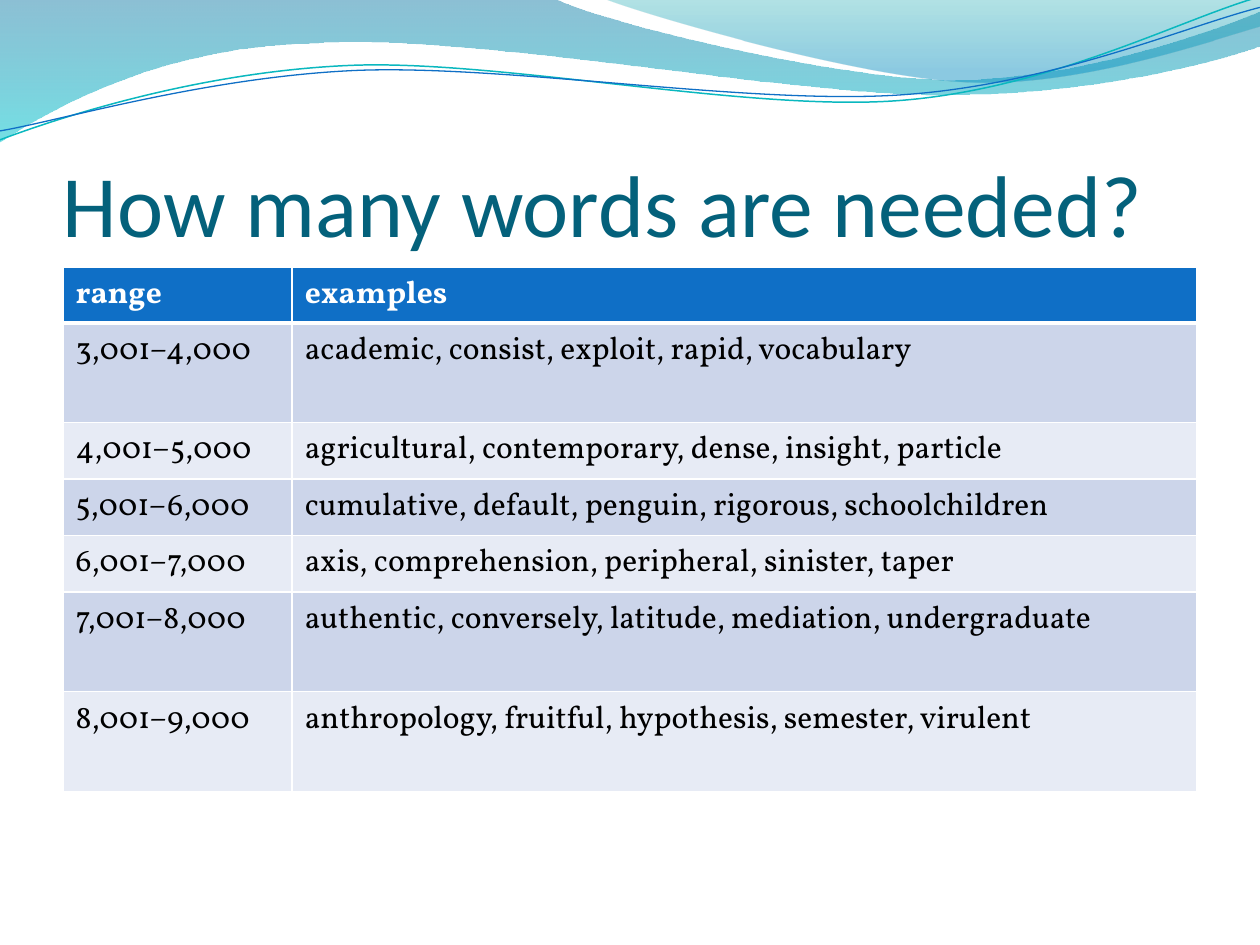
from lxml.etree import SubElement
from pptx import Presentation
from pptx.dml.color import RGBColor
from pptx.enum.text import MSO_ANCHOR
from pptx.oxml.ns import qn
from pptx.util import Cm, Pt

WHITE = RGBColor(0xFF, 0xFF, 0xFF)
BLACK = RGBColor(0, 0, 0)
BLUE = RGBColor(0x0F, 0x6F, 0xC6)
TEAL = RGBColor(0x0A, 0xB8, 0xBF)
TITLE_TEAL = RGBColor(0x04, 0x61, 0x7B)
BAND_DARK = RGBColor(0xCC, 0xD5, 0xEA)
BAND_LIGHT = RGBColor(0xE7, 0xEB, 0xF5)

# Content: each row is range, examples, height in cm
TITLE = "How many words are needed?"
WORD_ROWS = [
    ("range", "examples", 1.13),
    ("3,001–4,000", "academic, consist, exploit, rapid, vocabulary", 2.01),
    ("4,001–5,000", "agricultural, contemporary, dense, insight, particle", 1.14),
    ("5,001–6,000", "cumulative, default, penguin, rigorous, schoolchildren", 1.14),
    ("6,001–7,000", "axis, comprehension, peripheral, sinister, taper", 1.14),
    ("7,001–8,000", "authentic, conversely, latitude, mediation, undergraduate", 2.01),
    ("8,001–9,000", "anthropology, fruitful, hypothesis, semester, virulent", 2.01),
]
COLUMN_WIDTHS = (4.62, 18.24)

# Outlines in cm: a start point, then segments of one point (line) or three (curve)
# Gradient stops are position, colour, opacity in percent
WAVES = [
    {"start": (0, 0),
     "segments": [[(11.18, -0.03)],
                  [(12.09, 0.43), (16.87, 1.6), (19.25, 1.6)],
                  [(21.67, 1.6), (24.33, 0.66), (25.4, 0.23)],
                  [(25.43, 0.91)],
                  [(24.97, 1.12), (22.1, 1.93), (18.95, 1.91)],
                  [(15.8, 1.91), (9.7, 0.71), (6.53, 0.86)],
                  [(3.28, 0.91), (1.17, 2.11), (-0.03, 2.87)]],
     "stops": [(0, RGBColor(0, 0x74, 0xA1), 45), (1, RGBColor(0, 0xC6, 0xCF), 55)]},
    {"start": (12.17, -0.03),
     "segments": [[(12.93, 0.28), (17.32, 1.57), (19.53, 1.65)],
                  [(21.74, 1.75), (24.41, 0.81), (25.4, 0.53)],
                  [(25.4, 0)]],
     "stops": [(0, RGBColor(0, 0xA1, 0xA9), 30), (0.8, RGBColor(0, 0x8B, 0xBF), 45)]},
]
RIPPLES = [
    {"start": (0, 2.82), "color": TEAL, "width": 0.85,
     "segments": [[(1.22, 2.36), (4.01, 1.45), (7.04, 1.32)],
                  [(10.03, 1.19), (15.06, 2.26), (18.11, 2.03)],
                  [(21.16, 1.8), (23.83, 0.38), (25.35, -0.05)]]},
    {"start": (0, 2.64), "color": BLUE, "width": 0.75,
     "segments": [[(1.19, 2.44), (4.17, 1.55), (7.19, 1.42)],
                  [(10.24, 1.3), (15.16, 2.13), (18.21, 1.91)],
                  [(21.23, 1.7), (23.9, 0.53), (25.4, 0.15)]]},
]


def set_format(target, values):
    for name, value in values.items():
        setattr(target, name, value)


def set_font(paragraph, color, **values):
    font = paragraph.runs[0].font
    set_format(font, values)
    font.color.rgb = color


def add_outline(shapes, start, segments, close):
    """Draw a freeform through all points, then bend the three-point segments."""
    points = [(Cm(x), Cm(y)) for segment in segments for x, y in segment]
    builder = shapes.build_freeform(Cm(start[0]), Cm(start[1]))
    builder.add_line_segments(points, close=close)
    outline = builder.convert_to_shape()
    outline.shadow.inherit = False
    steps = iter(list(outline._element.iter(qn("a:lnTo"))))
    for segment in segments:
        group = [next(steps) for _ in segment]
        if len(group) == 3:
            group[0].tag, curve = qn("a:lnTo"), group[0].makeelement(qn("a:cubicBezTo"))
            group[0].addprevious(curve)
            for step in group:
                curve.append(step[0])
                step.getparent().remove(step)
    return outline


def add_wave(shapes, wave):
    shape = add_outline(shapes, wave["start"], wave["segments"], True)
    shape.line.fill.background()
    shape.fill.gradient()
    shape.fill.gradient_angle = 270
    for stop, (position, color, _) in zip(shape.fill.gradient_stops, wave["stops"]):
        stop.position = position
        stop.color.rgb = color
    colors = shape._element.spPr.iter(qn("a:srgbClr"))
    for color, (_, _, opacity) in zip(list(colors), wave["stops"]):
        SubElement(color, qn("a:alpha"), val=str(opacity * 1000))


def add_ripple(shapes, ripple):
    shape = add_outline(shapes, ripple["start"], ripple["segments"], False)
    shape.fill.background()
    shape.line.color.rgb = ripple["color"]
    shape.line.width = Pt(ripple["width"])


def set_borders(cell, widths):
    properties = cell._tc.get_or_add_tcPr()
    for index, (side, width) in enumerate(widths.items()):
        border = properties.makeelement(qn("a:ln" + side), {"w": str(Pt(width))})
        fill = SubElement(border, qn("a:solidFill"))
        SubElement(fill, qn("a:srgbClr"), val=str(WHITE))
        properties.insert(index, border)


def add_title(shapes):
    title = shapes.add_textbox(Cm(1.27), Cm(1.96), Cm(22.86), Cm(3.18))
    frame = title.text_frame
    set_format(frame, {"word_wrap": True, "vertical_anchor": MSO_ANCHOR.BOTTOM,
                       "margin_left": 0, "margin_right": 0,
                       "margin_top": Cm(0.13), "margin_bottom": 0})
    frame.text = TITLE
    set_font(frame.paragraphs[0], TITLE_TEAL, name="Calibri", size=Pt(50))


def add_word_table(shapes):
    height = sum(row[-1] for row in WORD_ROWS)
    table = shapes.add_table(len(WORD_ROWS), len(COLUMN_WIDTHS), Cm(1.27), Cm(5.38),
                             Cm(sum(COLUMN_WIDTHS)), Cm(height)).table
    table.horz_banding = False
    for column, width in zip(table.columns, COLUMN_WIDTHS):
        column.width = Cm(width)
    for r, (*texts, row_height) in enumerate(WORD_ROWS):
        table.rows[r].height = Cm(row_height)
        header = r == 0
        band = BLUE if header else (BAND_LIGHT, BAND_DARK)[r % 2]
        for c, text in enumerate(texts):
            cell = table.cell(r, c)
            cell.text = text
            cell.fill.solid()
            cell.fill.fore_color.rgb = band
            set_font(cell.text_frame.paragraphs[0], WHITE if header else BLACK,
                     name="Vollkorn", size=Pt(18), bold=header)
            set_borders(cell, {"L": 1, "R": 1, "T": 3 if r == 1 else 1,
                               "B": 3 if header else 1})


def main():
    presentation = Presentation()
    set_format(presentation, {"slide_width": Cm(25.4), "slide_height": Cm(19.05)})
    shapes = presentation.slides.add_slide(presentation.slide_layouts[6]).shapes

    # Header waves and ripples
    for wave in WAVES:
        add_wave(shapes, wave)
    for ripple in RIPPLES:
        add_ripple(shapes, ripple)

    # Title and table
    add_title(shapes)
    add_word_table(shapes)
    presentation.save("out.pptx")


if __name__ == "__main__":
    main()
